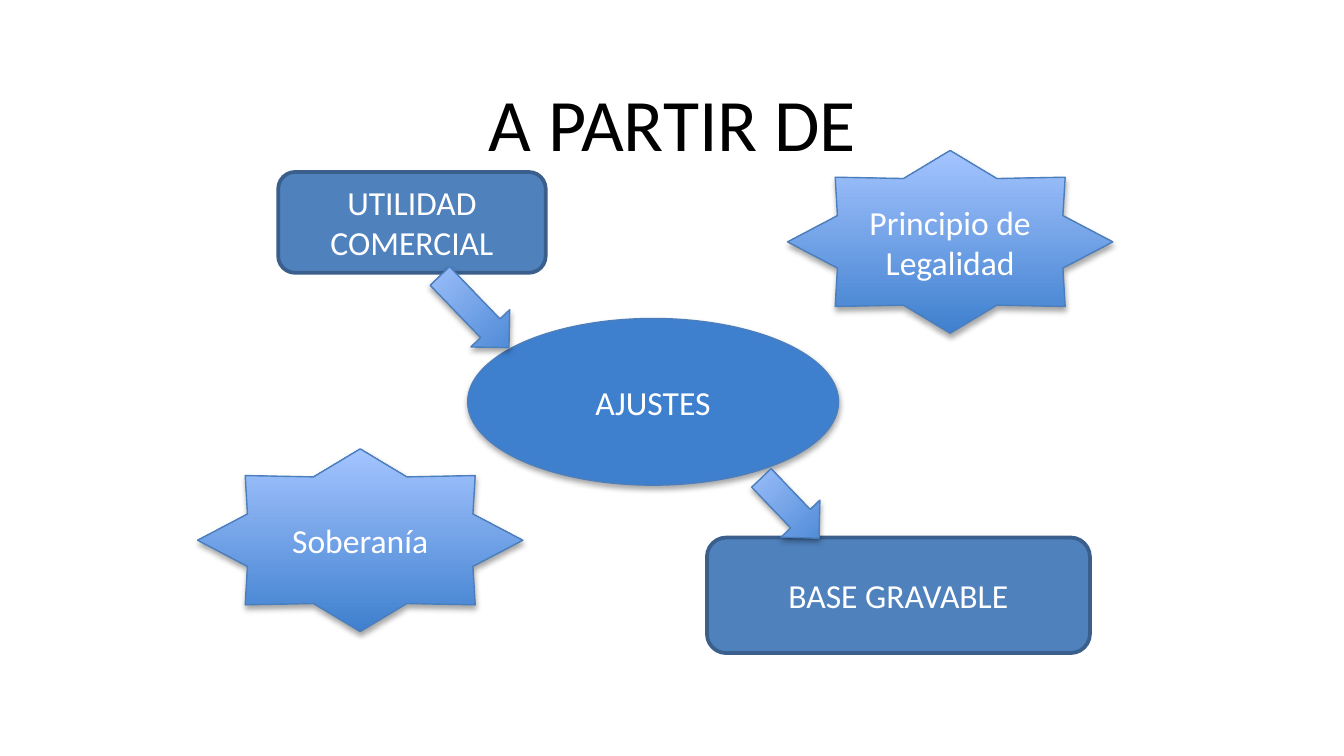
import pptx
import pptx.dml.color
import pptx.enum.shapes
import pptx.enum.text
import pptx.oxml
import pptx.oxml.ns
import pptx.util
from pptx.util import Inches

SHAPE = pptx.enum.shapes.MSO_SHAPE
DEEP_BLUE, LIGHT_BLUE, EDGE_BLUE = "3F80CE", "A4C4FF", "4B7EBC"
BOX_BLUE, BOX_EDGE = "4F81BD", "3A5F8C"


def color(hex_value):
    return pptx.dml.color.RGBColor.from_string(hex_value)


def write_text(shape, text, size, hex_value):
    frame = shape.text_frame
    frame.word_wrap = True
    frame.vertical_anchor = pptx.enum.text.MSO_ANCHOR.MIDDLE
    paragraph = frame.paragraphs[0]
    paragraph.alignment = pptx.enum.text.PP_ALIGN.CENTER
    run = paragraph.add_run()
    run.text = text
    run.font.name = "Calibri"
    run.font.size = pptx.util.Pt(size)
    run.font.color.rgb = color(hex_value)


def add_title(slide, text, left, top, width, height):
    title = slide.shapes.add_textbox(
        Inches(left), Inches(top), Inches(width), Inches(height))
    write_text(title, text, 39.6, "000000")


def add_block(slide, kind, box, edge, edge_width, text=None):
    block = slide.shapes.add_shape(kind, *[Inches(value) for value in box])
    block.shadow.inherit = False
    block.line.color.rgb = color(edge)
    block.line.width = pptx.util.Pt(edge_width)
    if text:
        write_text(block, text, 18, "FFFFFF")
    return block


def fill_solid(shape, hex_value):
    shape.fill.solid()
    shape.fill.fore_color.rgb = color(hex_value)


def fill_gradient(shape):
    """Deep blue at the bottom, light blue at the top."""
    shape.fill.gradient()
    shape.fill.gradient_angle = 90
    for stop, hex_value in zip(shape.fill.gradient_stops, (DEEP_BLUE, LIGHT_BLUE)):
        stop.color.rgb = color(hex_value)


def add_shadow(shape):
    effects = shape._element.spPr.find(pptx.oxml.ns.qn("a:effectLst"))
    effects.append(pptx.oxml.parse_xml(
        f'<a:outerShdw {pptx.oxml.ns.nsdecls("a")} blurRad="{pptx.util.Pt(3.1)}" '
        f'dist="{pptx.util.Pt(1.8)}" dir="5400000" rotWithShape="0">'
        '<a:srgbClr val="000000"><a:alpha val="35000"/></a:srgbClr></a:outerShdw>'))


def add_result_box(slide, text, *box):
    result = add_block(slide, SHAPE.ROUNDED_RECTANGLE, box, BOX_EDGE, 2, text)
    fill_solid(result, BOX_BLUE)


def add_adjustments(slide, text, *box):
    adjustments = add_block(slide, SHAPE.OVAL, box, EDGE_BLUE, 0.75, text)
    fill_solid(adjustments, DEEP_BLUE)
    add_shadow(adjustments)


def add_step_arrow(slide, rotation, *box):
    arrow = add_block(slide, SHAPE.DOWN_ARROW, box, EDGE_BLUE, 0.75)
    arrow.rotation = rotation
    fill_gradient(arrow)
    add_shadow(arrow)


def add_principle_star(slide, text, left, top):
    star = add_block(slide, SHAPE.STAR_8_POINT, (left, top, 2.42, 1.36),
                     EDGE_BLUE, 0.75, text)
    fill_gradient(star)
    add_shadow(star)


def main():
    # Widescreen slide, 16:9
    deck = pptx.Presentation()
    deck.slide_width = Inches(10)
    deck.slide_height = Inches(10 * 9 / 16)
    slide = deck.slides.add_slide(deck.slide_layouts[6])

    add_title(slide, "A PARTIR DE", 2.58, 0.51, 4.85, 0.8)

    # From commercial profit, through adjustments, to the tax base
    add_result_box(slide, "UTILIDAD COMERCIAL", 2.07, 1.28, 1.99, 0.75)
    add_result_box(slide, "BASE GRAVABLE", 5.26, 4, 2.85, 0.86)
    add_adjustments(slide, "AJUSTES", 3.48, 2.37, 2.76, 1.24)
    add_step_arrow(slide, 316.1, 3.33, 1.95, 0.4, 0.74)
    add_step_arrow(slide, 316.3, 5.68, 3.47, 0.4, 0.62)

    # Guiding principles
    add_principle_star(slide, "Principio de Legalidad", 5.86, 1.12)
    add_principle_star(slide, "Soberanía", 1.47, 3.34)

    deck.save("out.pptx")


if __name__ == "__main__":
    main()
